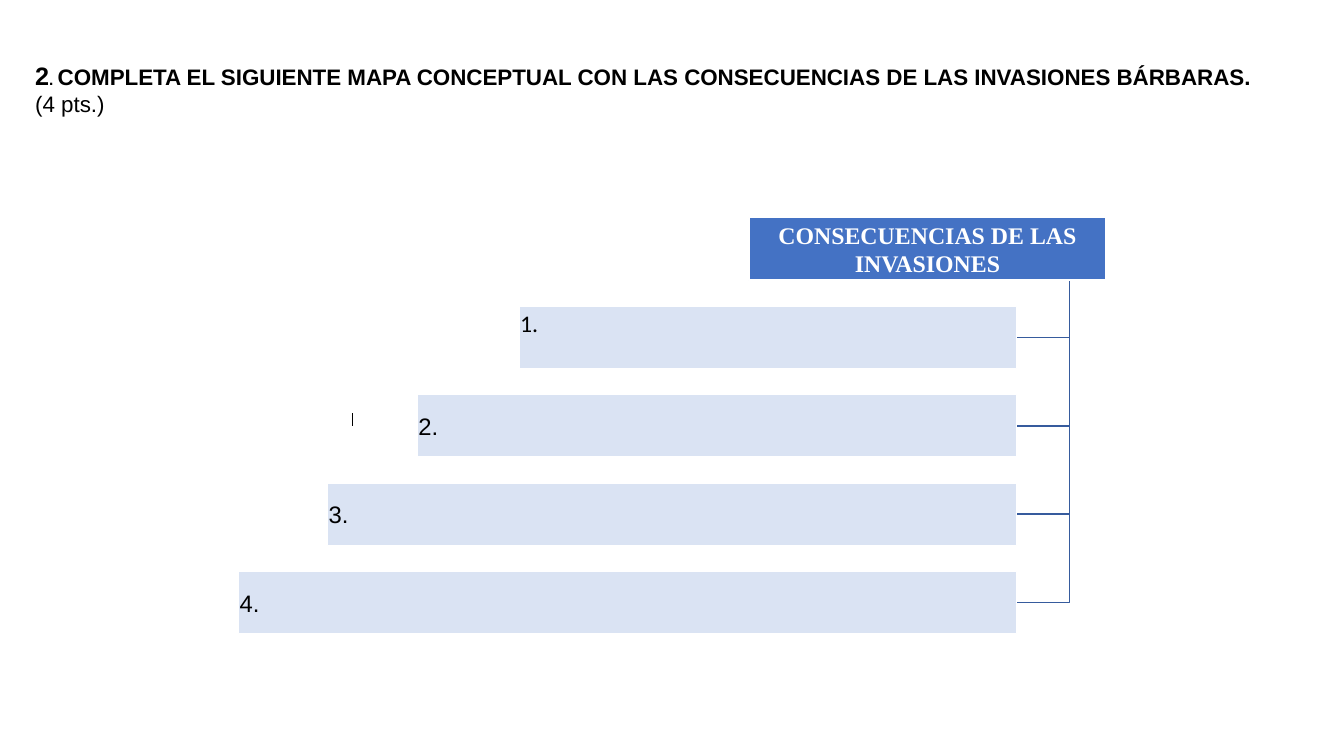
from pptx import Presentation, util as u
from pptx.dml.color import RGBColor
from pptx.enum import shapes, text
from pptx.oxml import parse_xml
from pptx.oxml.ns import nsdecls

Pt = u.Pt


def color(value):
    return RGBColor.from_string(value)


def add_run(p, content, font="Arial", size=17, fill="000000", bold=False):
    r = p.add_run()
    r.text = content
    r.font.name = font
    r.font.size = Pt(size)
    r.font.bold = bold
    r.font.color.rgb = color(fill)


class ConceptMap:
    blue, pale, link, white = "4472C4", "DAE3F3", "365B9D", "FFFFFF"

    def __init__(self, prs):
        self.s = prs.slides.add_slide(prs.slide_layouts[6])

    def frame(self, sp, lines, align, anchor, insets):
        """Fill a text frame; each line is a list of (content, format) runs."""
        tf = sp.text_frame
        tf.word_wrap = True
        tf.vertical_anchor = anchor
        side, top = insets
        tf.margin_left = tf.margin_right = Pt(side)
        tf.margin_top, tf.margin_bottom = Pt(top), Pt(0.7)
        for i, runs in enumerate(lines):
            p = tf.paragraphs[0] if i == 0 else tf.add_paragraph()
            p.alignment = align
            for content, style in runs:
                add_run(p, content, **style)

    def box(self, x, y, w, h, fill, lines, align=text.PP_ALIGN.LEFT,
            anchor=text.MSO_ANCHOR.MIDDLE, top=0.7):
        sp = self.s.shapes.add_shape(shapes.MSO_SHAPE.RECTANGLE,
                                     Pt(x), Pt(y), Pt(w), Pt(h))
        sp.shadow.inherit = False
        sp.fill.solid()
        sp.fill.fore_color.rgb = color(fill)
        sp.line.color.rgb = color(self.white)
        sp.line.width = Pt(1)
        self.frame(sp, lines, align, anchor, (0.7, top))

    def label(self, x, y, w, h, lines):
        sp = self.s.shapes.add_textbox(Pt(x), Pt(y), Pt(w), Pt(h))
        self.frame(sp, lines, text.PP_ALIGN.LEFT, text.MSO_ANCHOR.TOP, (7.2, 5.4))

    def elbow(self, x, y, end_x, end_y):
        path = self.s.shapes.build_freeform(Pt(x), Pt(y))
        path.add_line_segments([(Pt(x), Pt(end_y)), (Pt(end_x), Pt(end_y))],
                               close=False)
        sp = path.convert_to_shape()
        sp.shadow.inherit = False
        sp.fill.background()
        sp.line.color.rgb = color(self.link)
        sp.line.width = Pt(1)

    def line(self, x1, y1, x2, y2):
        c = self.s.shapes.add_connector(shapes.MSO_CONNECTOR.STRAIGHT,
                                        Pt(x1), Pt(y1), Pt(x2), Pt(y2))
        c.line.color.rgb = color("000000")
        c.line.width = Pt(0.75)
        c._element.spPr.append(parse_xml(f"<a:effectLst {nsdecls('a')}/>"))


def main():
    prs = Presentation()
    prs.slide_width, prs.slide_height = Pt(960), Pt(540)
    cm = ConceptMap(prs)

    top, pitch, height = 155.6, 63.15, 44.5
    right, trunk = 726, 763.9
    answer_lefts = [370.8, 298.1, 234, 170.5]

    # Stray tick
    cm.line(252, 295.2, 252, 304.6)

    # Links from the heading to each answer, longest first
    for row in range(len(answer_lefts), 0, -1):
        cm.elbow(trunk, top + height, right, top + row * pitch + height / 2)

    # Heading
    heading = dict(font="Times New Roman", fill=cm.white, bold=True)
    cm.box(535, top, 255, height, cm.blue,
           [[("CONSECUENCIAS DE LAS", heading)], [("INVASIONES", heading)]],
           align=text.PP_ALIGN.CENTER)

    # Answer bars; the first one is written from the top
    for row, left in enumerate(answer_lefts, 1):
        first = row == 1
        cm.box(left, top + row * pitch, right - left, height, cm.pale,
               [[(f"{row}.", dict(font="Calibri" if first else "Arial"))]],
               anchor=text.MSO_ANCHOR.TOP if first else text.MSO_ANCHOR.MIDDLE,
               top=1.5 if first else 0.7)

    # Question
    cm.label(18, 37.4, 893, 70.6, [
        [("2", dict(size=18, bold=True)),
         (". ", dict(size=11, bold=True)),
         ("COMPLETA EL SIGUIENTE MAPA CONCEPTUAL CON LAS CONSECUENCIAS "
          "DE LAS INVASIONES BÁRBARAS.", dict(size=16, bold=True))],
        [("(4 pts.)", dict(size=16))]])

    prs.save("out.pptx")


if __name__ == "__main__":
    main()
